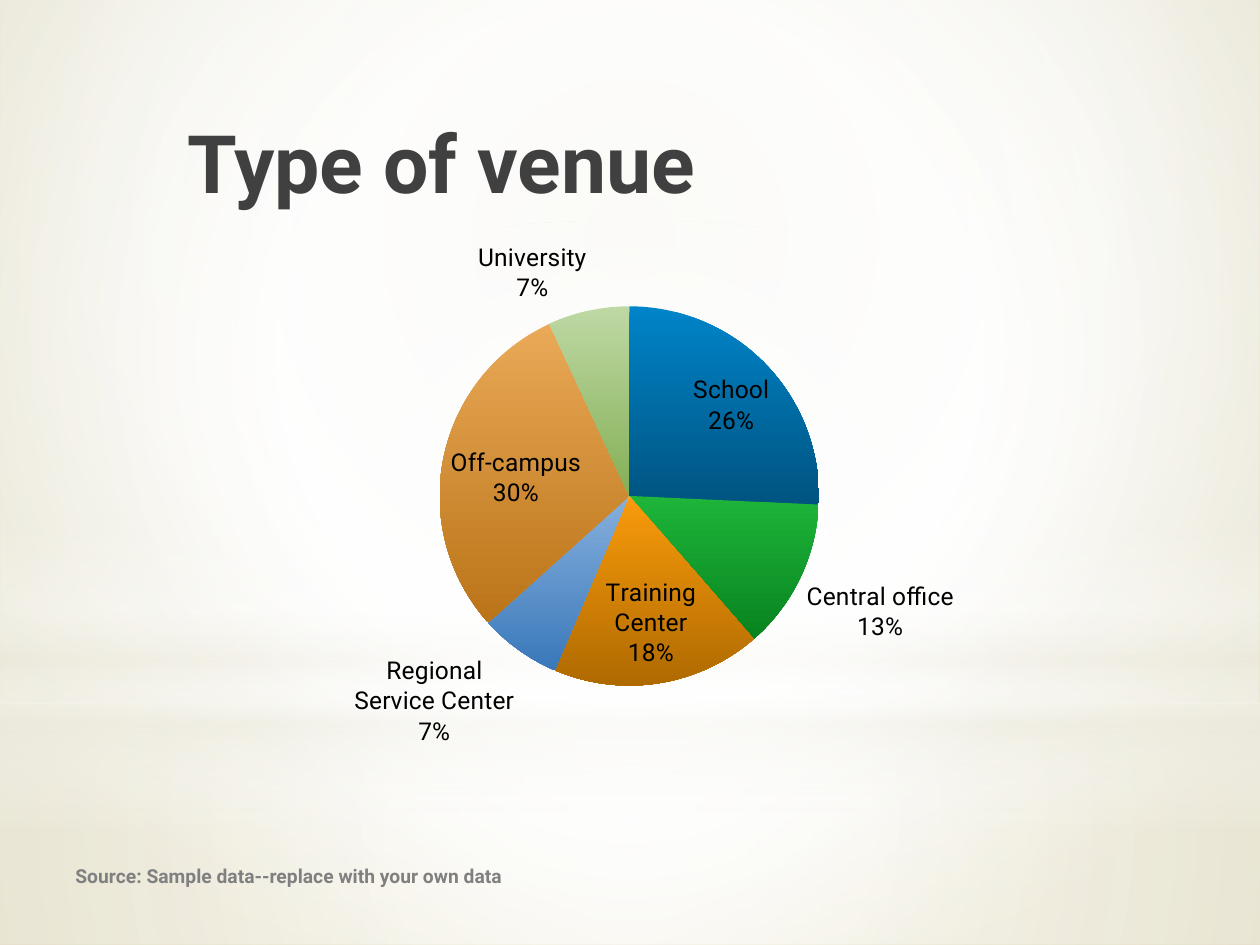
from lxml import etree
from pptx import Presentation
from pptx.chart.data import CategoryChartData
from pptx.dml.color import RGBColor
from pptx.enum import chart as ch, shapes, text
from pptx.oxml import parse_xml
from pptx.oxml.ns import nsdecls, qn
from pptx.util import Inches, Pt

FONT = "Roboto"
INK = {"white": "FFFFFF", "cream": "EEECE1", "sand": "E7E4D4", "tan": "D5CC9F",
       "title": "404040", "note": "808080", "label": "000000"}
CENTER = (50, 50, 50, 50)

# Category, share, top and bottom colour of the slice
VENUES = [("School", 26, "0084C9", "005480"),
          ("Central office", 13, "1EB53A", "08831F"),
          ("Training Center", 18, "F99B0C", "AF6A00"),
          ("Regional Service Center", 7, "86B0DD", "3A78BA"),
          ("Off-campus", 30, "E9A957", "BB7418"),
          ("University", 7, "BED8A4", "84B055")]


def set_grad(holder, stops, rect=None):
    """Swap a solid fill for a gradient: round if rect is given, else downward."""
    marks = "".join(
        f'<a:gs pos="{pos * 1000}"><a:srgbClr val="{INK[name]}">'
        f'<a:alpha val="{alpha * 1000}"/></a:srgbClr></a:gs>'
        for pos, name, alpha in stops)
    if rect:
        sides = " ".join(f'{k}="{v * 1000}"' for k, v in zip("ltrb", rect))
        way = f'<a:path path="circle"><a:fillToRect {sides}/></a:path>'
    else:
        way = '<a:lin ang="5400000" scaled="0"/>'
    grad = parse_xml(f'<a:gradFill {nsdecls("a")} rotWithShape="1">'
                     f'<a:gsLst>{marks}</a:gsLst>{way}</a:gradFill>')
    solid = holder.find(qn("a:solidFill"))
    holder.replace(solid, grad)


def add_glow(slide, kind, box, stops, rect=None):
    glow = slide.shapes.add_shape(kind, *map(Inches, box))
    glow.shadow.inherit = False
    glow.line.fill.background()
    glow.fill.solid()
    set_grad(glow._element.spPr, stops, rect)


def add_back(slide):
    slide.background.fill.solid()
    holder = next(slide._element.iter(qn("p:bgPr")))
    set_grad(holder, [(0, "sand", 100), (60, "white", 100), (100, "tan", 100)],
             (20, 10, 20, 60))
    rect, oval = shapes.MSO_SHAPE.RECTANGLE, shapes.MSO_SHAPE.OVAL
    # Floor and wall
    add_glow(slide, rect, (0, 5.58, 10, 1.92),
             [(0, "white", 91), (37, "white", 76), (100, "cream", 79)], CENTER)
    add_glow(slide, rect, (0, 0, 10, 5.58),
             [(0, "white", 83), (48, "white", 83), (100, "cream", 83)], CENTER)
    # Horizon band and central light
    add_glow(slide, rect, (0, 4.12, 10, 2.5),
             [(0, "white", 0), (29, "white", 30), (45, "cream", 40),
              (55, "white", 26), (65, "cream", 60), (100, "white", 0)])
    add_glow(slide, oval, (0, 1.75, 10, 5.58),
             [(0, "white", 100), (56, "white", 0)], CENTER)


def set_font(font, size, color, bold=False):
    font.name, font.size, font.bold = FONT, Pt(size), bold
    font.color.rgb = RGBColor.from_string(INK[color])


def add_text(slide, box, words, size, color, anchor):
    frame = slide.shapes.add_textbox(*map(Inches, box)).text_frame
    frame.word_wrap = True
    frame.vertical_anchor = anchor
    frame.text = words
    set_font(frame.paragraphs[0].runs[0].font, size, color, True)
    return frame


def add_pie(slide, box):
    data = CategoryChartData()
    data.categories = [row[0] for row in VENUES]
    data.add_series("Series 1", [row[1] for row in VENUES])
    chart = slide.shapes.add_chart(ch.XL_CHART_TYPE.PIE, *map(Inches, box), data).chart
    chart.has_legend = chart.has_title = False
    set_font(chart.font, 18, "label")
    plot = chart.plots[0]
    plot.vary_by_categories = True

    # Slices
    for i, (_, _, top, base) in enumerate(VENUES):
        fill = plot.series[0].points[i].format.fill
        fill.gradient()
        fill.gradient_angle = 270
        for stop, tone in zip(fill.gradient_stops, (top, base)):
            stop.color.rgb = RGBColor.from_string(tone)

    # Labels
    plot.has_data_labels = True
    tags = plot.data_labels
    tags.show_category_name = tags.show_percentage = True
    tags.show_value = False
    tags.position = ch.XL_LABEL_POSITION.BEST_FIT
    set_font(tags.font, 14, "label")

    # Pie circle within the chart frame
    area = chart._chartSpace.chart.plotArea
    for old in area.findall(qn("c:layout")):
        area.remove(old)
    layout = etree.Element(qn("c:layout"))
    manual = etree.SubElement(layout, qn("c:manualLayout"))
    for key, val in (("layoutTarget", "inner"), ("xMode", "edge"), ("yMode", "edge"),
                     ("x", 0.32), ("y", 0.14), ("w", 0.43), ("h", 0.66)):
        etree.SubElement(manual, qn("c:" + key)).set("val", str(val))
    area.insert(0, layout)


def main():
    deck = Presentation()
    deck.slide_width, deck.slide_height = Inches(10), Inches(7.5)
    slide = deck.slides.add_slide(deck.slide_layouts[6])
    add_back(slide)
    title = add_text(slide, (1.25, 0.81, 7.12, 1.25), " Type of venue", 46,
                     "title", text.MSO_ANCHOR.TOP)
    title.margin_top = Inches(0.09)
    add_pie(slide, (1.25, 1.77, 7, 4.61))
    add_text(slide, (0.5, 6.75, 6.08, 0.4),
             "Source: Sample data--replace with your own data", 11,
             "note", text.MSO_ANCHOR.MIDDLE)
    deck.save("out.pptx")


if __name__ == "__main__":
    main()
